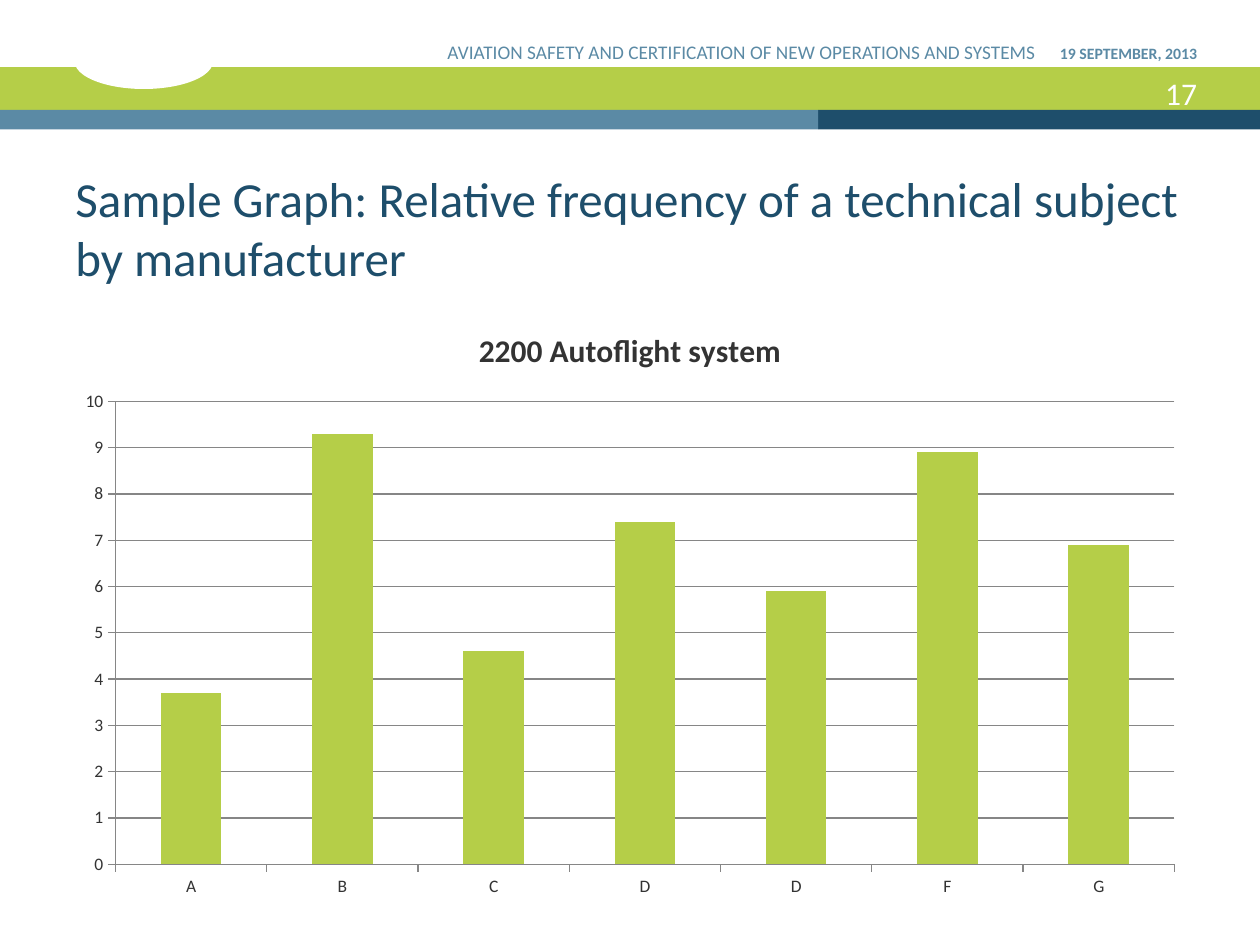
from dataclasses import dataclass

from pptx import Presentation, util as u
from pptx.chart import data
from pptx.dml import color
from pptx.enum import chart as ch, shapes, text

Pt = u.Pt


@dataclass(frozen=True)
class Theme:
    font: str = "Calibri"
    lime: str = "B5CE48"
    navy: str = "1E4E6B"
    steel: str = "5B8AA5"
    white: str = "FFFFFF"
    ink: str = "333333"
    rule: str = "868686"
    heading: float = 28
    number: float = 18
    chart_title: float = 18
    event: float = 11
    label: float = 10
    date: float = 9


class SlideBuilder:
    def __init__(self, slide, theme):
        self.slide = slide
        self.theme = theme

    def set_font(self, font, size, rgb, bold=False):
        values = {"name": self.theme.font, "size": Pt(size), "bold": bold}
        for key, value in values.items():
            setattr(font, key, value)
        font.color.rgb = color.RGBColor.from_string(rgb)

    def paint(self, fill, rgb):
        fill.solid()
        fill.fore_color.rgb = color.RGBColor.from_string(rgb)

    def block(self, kind, box, rgb):
        shape = self.slide.shapes.add_shape(kind, *map(Pt, box))
        shape.shadow.inherit = False
        self.paint(shape.fill, rgb)
        shape.line.fill.background()

    def label(self, words, box, size, rgb, bold=False,
              align=text.PP_ALIGN.RIGHT, right_inset=0):
        frame = self.slide.shapes.add_textbox(*map(Pt, box)).text_frame
        layout = {
            "word_wrap": True,
            "vertical_anchor": text.MSO_ANCHOR.BOTTOM,
            "margin_left": Pt(7.2),
            "margin_right": Pt(right_inset),
            "margin_top": Pt(3.6),
            "margin_bottom": Pt(3.6),
        }
        for key, value in layout.items():
            setattr(frame, key, value)
        paragraph = frame.paragraphs[0]
        paragraph.alignment = align
        run = paragraph.add_run()
        run.text = words
        self.set_font(run.font, size, rgb, bold)

    def columns(self, title, frequencies, box):
        theme = self.theme
        source = data.CategoryChartData()
        source.categories = [maker for maker, _ in frequencies]
        source.add_series(title, [value for _, value in frequencies])
        chart = self.slide.shapes.add_chart(
            ch.XL_CHART_TYPE.COLUMN_CLUSTERED, *map(Pt, box), source).chart
        self.set_font(chart.font, theme.label, theme.ink)
        chart.has_legend = False
        chart.has_title = True
        heading = chart.chart_title.text_frame.paragraphs[0].add_run()
        heading.text = title
        self.set_font(heading.font, theme.chart_title, theme.ink, bold=True)

        plot = chart.plots[0]
        plot.gap_width = 150
        plot.vary_by_categories = False
        bars = plot.series[0]
        bars.invert_if_negative = False
        self.paint(bars.format.fill, theme.lime)

        scale = {"minimum_scale": 0, "maximum_scale": 10, "major_unit": 1,
                 "has_major_gridlines": True}
        for key, value in scale.items():
            setattr(chart.value_axis, key, value)
        for axis in (chart.category_axis, chart.value_axis):
            axis.major_tick_mark = ch.XL_TICK_MARK.OUTSIDE
            self.set_font(axis.tick_labels.font, theme.label, theme.ink)
        for owner in (chart.category_axis, chart.value_axis,
                      chart.value_axis.major_gridlines):
            self.paint(owner.format.line.fill, theme.rule)
            owner.format.line.width = Pt(0.75)


def main():
    theme = Theme()
    deck = Presentation()
    deck.slide_width, deck.slide_height = Pt(720), Pt(540)
    page = SlideBuilder(deck.slides.add_slide(deck.slide_layouts[6]), theme)

    rect = shapes.MSO_SHAPE.RECTANGLE
    split = 467.5
    page.block(rect, (0, 38.4, 720, 24.4), theme.lime)
    page.block(rect, (split, 62.8, 720 - split, 11.2), theme.navy)
    page.block(rect, (0, 62.8, split, 11.2), theme.steel)
    page.block(shapes.MSO_SHAPE.OVAL, (42.6, 19.2, 79.2, 31.7), theme.white)

    page.label("Sample Graph: Relative frequency of a technical subject by manufacturer",
               (36, 82.8, 648, 84.2), theme.heading, theme.navy,
               align=text.PP_ALIGN.LEFT, right_inset=7.2)
    page.label("17", (624, 38.9, 60, 28.8), theme.number, theme.white)
    page.label("19 SEPTEMBER, 2013", (594, 3.6, 90, 36), theme.date,
               theme.steel, bold=True)
    page.label("AVIATION SAFETY AND CERTIFICATION OF NEW OPERATIONS AND SYSTEMS",
               (212, 3.6, 380, 36), theme.event, theme.steel)

    frequencies = [("A", 3.7), ("B", 9.3), ("C", 4.6), ("D", 7.4),
                   ("D", 5.9), ("F", 8.9), ("G", 6.9)]
    page.columns("2200 Autoflight system", frequencies, (36, 173.5, 648, 345.6))
    deck.save("out.pptx")


if __name__ == "__main__":
    main()
